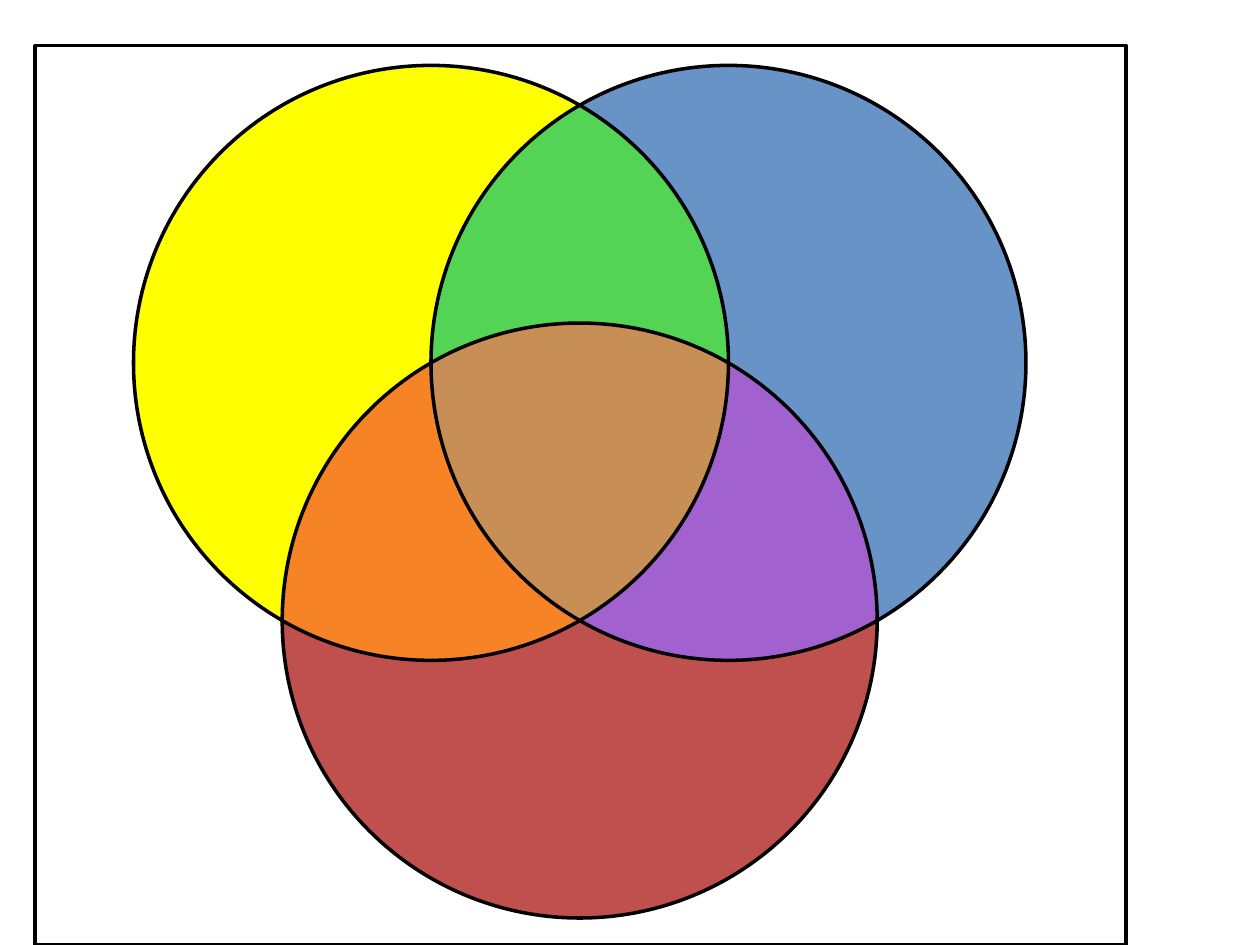
from dataclasses import dataclass
from math import sqrt

from pptx import Presentation
from pptx.dml.color import RGBColor
from pptx.enum.shapes import MSO_SHAPE as Shape
from pptx.shapes.autoshape import Shape as AutoShape
from pptx.shapes.shapetree import GroupShapes
from pptx.util import Pt

COLORS = {
    "yellow": "FFFF00",
    "red": "C0504D",
    "blue": "6893C6",
    "purple": "A162D0",
    "orange": "F68426",
    "green": "54D454",
    "brown": "C78E55",
    "outline": "000000",
}
RADIUS = 170
LINE_WIDTH = 2
ADJUSTMENT_PER_DEGREE = 0.6  # pie angles are stored in 60,000ths of a degree


@dataclass(frozen=True)
class Circle:
    left: float
    top: float

    @property
    def box(self) -> tuple[Pt, Pt, Pt, Pt]:
        return Pt(self.left), Pt(self.top), Pt(2 * RADIUS), Pt(2 * RADIUS)


@dataclass(frozen=True)
class Sector:
    circle: Circle
    start: int  # degrees, clockwise from the right
    end: int
    color: str


# The three centres form an equilateral triangle with sides of one radius
LEFT = Circle(76.3, 37.4)
RIGHT = Circle(LEFT.left + RADIUS, LEFT.top)
BOTTOM = Circle(LEFT.left + RADIUS / 2, LEFT.top + RADIUS * sqrt(3) / 2)

# Later sectors cover earlier ones
SECTORS = [
    Sector(LEFT, 120, 300, "yellow"),
    Sector(BOTTOM, 0, 180, "red"),
    Sector(RIGHT, 240, 60, "blue"),
    Sector(BOTTOM, 300, 0, "purple"),
    Sector(RIGHT, 60, 120, "purple"),
    Sector(BOTTOM, 180, 240, "orange"),
    Sector(LEFT, 60, 120, "orange"),
    Sector(RIGHT, 180, 240, "green"),
    Sector(LEFT, 300, 0, "green"),
    Sector(LEFT, 0, 60, "brown"),
    Sector(RIGHT, 120, 180, "brown"),
    Sector(BOTTOM, 240, 300, "brown"),
]


def draw_sector(shapes: GroupShapes, sector: Sector) -> None:
    shape = shapes.add_shape(Shape.PIE, *sector.circle.box)
    shape.shadow.inherit = False
    shape.adjustments[0] = sector.start * ADJUSTMENT_PER_DEGREE
    shape.adjustments[1] = sector.end * ADJUSTMENT_PER_DEGREE
    shape.fill.solid()
    shape.fill.fore_color.rgb = RGBColor.from_string(COLORS[sector.color])
    shape.line.fill.background()


def format_outline(shape: AutoShape) -> None:
    shape.shadow.inherit = False
    shape.fill.background()
    shape.line.color.rgb = RGBColor.from_string(COLORS["outline"])
    shape.line.width = Pt(LINE_WIDTH)


def main() -> None:
    presentation = Presentation()
    presentation.slide_width, presentation.slide_height = Pt(720), Pt(540)
    slide = presentation.slides.add_slide(presentation.slide_layouts[6])

    # Venn diagram: coloured regions, then circle outlines
    diagram = slide.shapes.add_group_shape()
    for sector in SECTORS:
        draw_sector(diagram.shapes, sector)
    for circle in (BOTTOM, LEFT, RIGHT):
        format_outline(diagram.shapes.add_shape(Shape.OVAL, *circle.box))

    # Frame of the universal set
    format_outline(
        slide.shapes.add_shape(Shape.RECTANGLE, Pt(20), Pt(26), Pt(623.5), Pt(514))
    )

    presentation.save("out.pptx")


if __name__ == "__main__":
    main()
